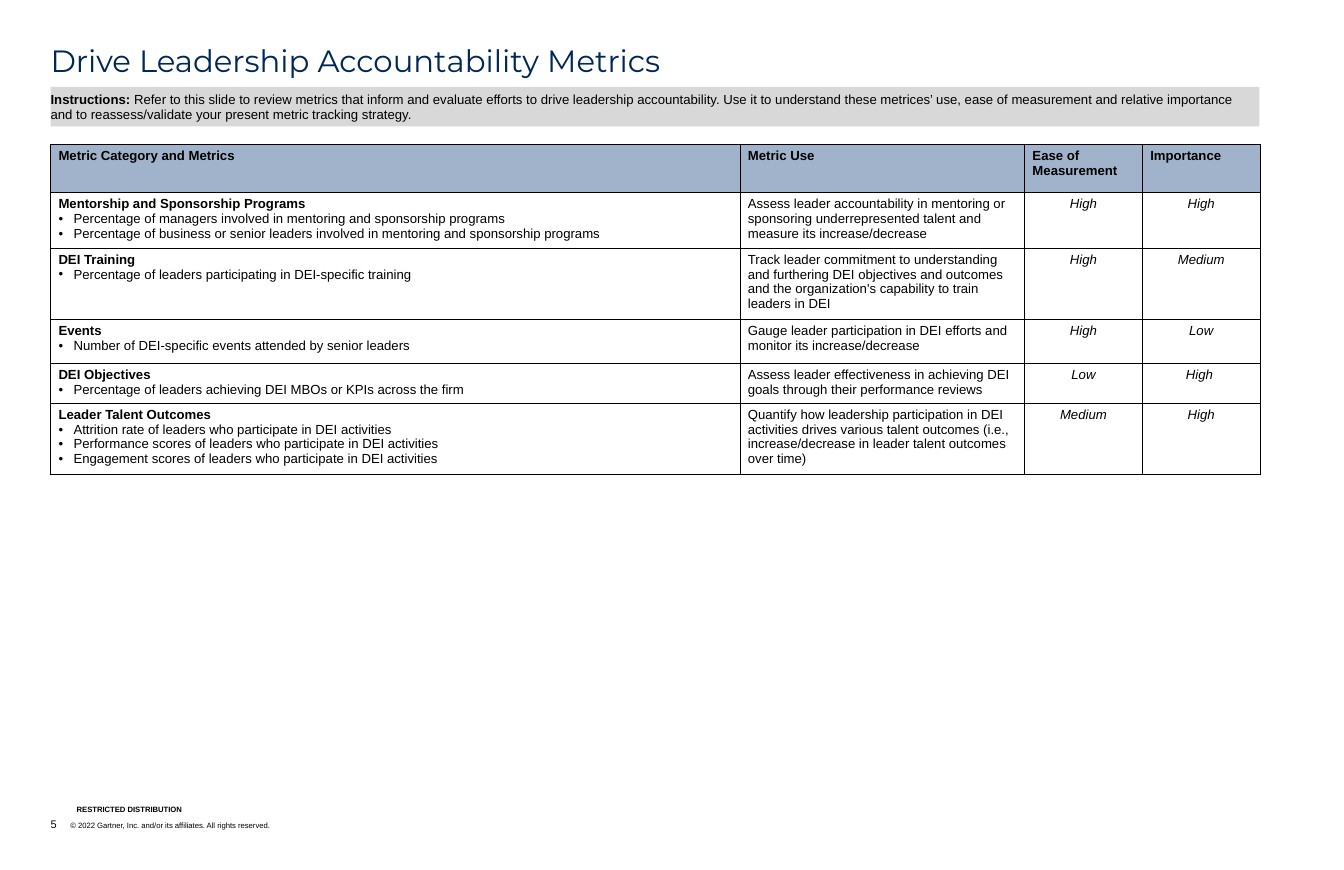
import pptx
import pptx.dml.color
import pptx.enum.shapes
import pptx.enum.text
import pptx.oxml
import pptx.oxml.ns
import pptx.util

Inches = pptx.util.Inches
Pt = pptx.util.Pt
RGBColor = pptx.dml.color.RGBColor
ALIGN = pptx.enum.text.PP_ALIGN
ANCHOR = pptx.enum.text.MSO_ANCHOR

NAVY = RGBColor(0x00, 0x28, 0x56)
BLACK = RGBColor(0x00, 0x00, 0x00)
GREY = RGBColor(0xD8, 0xD8, 0xD8)
STEEL = RGBColor(0xA1, 0xB3, 0xCA)

LEFT = Inches(0.64)
CONTENT_WIDTH = Inches(15.29)
BULLET_INDENT = Inches(0.19)
COLUMN_WIDTHS = [8.72, 3.6, 1.49, 1.49]
ROW_HEIGHTS = [0.61, 0.57, 0.41, 0.56, 0.41, 0.41]

HEADERS = ["Metric Category and Metrics", "Metric Use", "Ease of Measurement", "Importance"]
METRICS = [
    ("Mentorship and Sponsorship Programs",
     ["Percentage of managers involved in mentoring and sponsorship programs",
      "Percentage of business or senior leaders involved in mentoring and sponsorship programs"],
     "Assess leader accountability in mentoring or sponsoring underrepresented talent "
     "and measure its increase/decrease", "High", "High"),
    ("DEI Training",
     ["Percentage of leaders participating in DEI-specific training"],
     "Track leader commitment to understanding and furthering DEI objectives and outcomes "
     "and the organization's capability to train leaders in DEI", "High", "Medium"),
    ("Events",
     ["Number of DEI-specific events attended by senior leaders"],
     "Gauge leader participation in DEI efforts and monitor its increase/decrease",
     "High", "Low"),
    ("DEI Objectives",
     ["Percentage of leaders achieving DEI MBOs or KPIs across the firm"],
     "Assess leader effectiveness in achieving DEI goals through their performance reviews",
     "Low", "High "),
    ("Leader Talent Outcomes",
     ["Attrition rate of leaders who participate in DEI activities",
      "Performance scores of leaders who participate in DEI activities",
      "Engagement scores of leaders who participate in DEI activities"],
     "Quantify how leadership participation in DEI activities drives various talent outcomes "
     "(i.e., increase/decrease in leader talent outcomes over time)", "Medium", "High"),
]


def format_run(run, size=12, bold=False, italic=False, color=BLACK, name="Arial"):
    run.font.name = name
    run.font.size = Pt(size)
    run.font.bold = bold
    run.font.italic = italic
    run.font.color.rgb = color


def set_margins(frame, vertical=0):
    frame.margin_left = frame.margin_right = 0
    frame.margin_top = frame.margin_bottom = Inches(vertical)
    frame.word_wrap = True


def set_indent(paragraph, indent):
    properties = paragraph._p.get_or_add_pPr()
    properties.set("marL", str(indent))
    properties.set("indent", str(-indent))
    return properties


def add_bullet(paragraph):
    properties = set_indent(paragraph, BULLET_INDENT)
    for element in ('buFont {} typeface="Arial"', 'buChar {} char="•"'):
        markup = element.format(pptx.oxml.ns.nsdecls("a"))
        properties.append(pptx.oxml.parse_xml(f"<a:{markup}/>"))


def add_title(slide):
    title = slide.shapes.title
    title.left, title.top = LEFT, Inches(0.58)
    title.width, title.height = Inches(15.72), Inches(0.72)
    frame = title.text_frame
    frame.text = "Drive Leadership Accountability Metrics"
    set_margins(frame)
    frame.auto_size = pptx.enum.text.MSO_AUTO_SIZE.NONE
    frame.vertical_anchor = ANCHOR.TOP
    heading = frame.paragraphs[0]
    heading.alignment = ALIGN.LEFT
    heading.line_spacing = 0.9
    format_run(heading.runs[0], 28, color=NAVY, name="Montserrat")


def add_instructions(slide):
    banner = slide.shapes.add_shape(
        pptx.enum.shapes.MSO_SHAPE.RECTANGLE, LEFT, Inches(1.1), CONTENT_WIDTH, Inches(0.5))
    banner.shadow.inherit = False
    banner.fill.solid()
    banner.fill.fore_color.rgb = GREY
    banner.line.fill.background()
    frame = banner.text_frame
    set_margins(frame, 0.05)
    frame.vertical_anchor = ANCHOR.TOP
    instructions = frame.paragraphs[0]
    instructions.text = "Instructions: "
    instructions.alignment = ALIGN.LEFT
    format_run(instructions.runs[0], bold=True)
    guidance = instructions.add_run()
    guidance.text = (
        "Refer to this slide to review metrics that inform and evaluate efforts to drive "
        "leadership accountability. Use it to understand these metrices’ use, ease of "
        "measurement and relative importance and to reassess/validate your present metric "
        "tracking strategy.")
    format_run(guidance)


def add_borders(cell):
    properties = cell._tc.get_or_add_tcPr()
    for side in ("lnL", "lnR", "lnT", "lnB"):
        properties.append(pptx.oxml.parse_xml(
            f'<a:{side} {pptx.oxml.ns.nsdecls("a")} w="{Pt(1)}"><a:solidFill>'
            f'<a:srgbClr val="{BLACK}"/></a:solidFill></a:{side}>'))


def fill_cell(cell, text, fill=None, alignment=ALIGN.LEFT, bullets=(), **style):
    add_borders(cell)
    if fill is None:
        cell.fill.background()
    else:
        cell.fill.solid()
        cell.fill.fore_color.rgb = fill
    lead = cell.text_frame.paragraphs[0]
    lead.text = text
    lead.alignment = alignment
    format_run(lead.runs[0], **style)
    for bullet in bullets:
        item = cell.text_frame.add_paragraph()
        item.text = bullet
        add_bullet(item)
        format_run(item.runs[0])


def add_metrics_table(slide):
    table = slide.shapes.add_table(
        len(ROW_HEIGHTS), len(COLUMN_WIDTHS), LEFT, Inches(1.83),
        CONTENT_WIDTH, Inches(sum(ROW_HEIGHTS))).table
    table.horz_banding = False
    for column, width in zip(table.columns, COLUMN_WIDTHS):
        column.width = Inches(width)
    for row, height in zip(table.rows, ROW_HEIGHTS):
        row.height = Inches(height)
    for column, header in enumerate(HEADERS):
        fill_cell(table.cell(0, column), header, STEEL, bold=True)
    for row, (category, metrics, use, ease, importance) in enumerate(METRICS, 1):
        fill_cell(table.cell(row, 0), category, bullets=metrics, bold=True)
        fill_cell(table.cell(row, 1), use)
        for column, rating in enumerate((ease, importance), 2):
            fill_cell(table.cell(row, column), rating, alignment=ALIGN.CENTER, italic=True)


def add_footer_line(slide, text, left, top, width, height, **style):
    box = slide.shapes.add_textbox(left, Inches(top), Inches(width), Inches(height))
    frame = box.text_frame
    frame.text = text
    set_margins(frame)
    frame.vertical_anchor = ANCHOR.BOTTOM
    line = frame.paragraphs[0]
    format_run(line.runs[0], **style)
    return line


def add_footer(slide):
    notice = add_footer_line(slide, "RESTRICTED DISTRIBUTION", Inches(0.97),
                             10.18, 3.23, 0.11, size=7, bold=True)
    notice.line_spacing = 0.9
    page_line = add_footer_line(slide, "5", LEFT, 10.33, 10.19, 0.17, size=10)
    set_indent(page_line, Inches(0.25))
    rights = page_line.add_run()
    rights.text = "\t© 2022 Gartner, Inc. and/or its affiliates. All rights reserved."
    format_run(rights, 7)


def main():
    presentation = pptx.Presentation()
    presentation.slide_width = Inches(17)
    presentation.slide_height = Inches(11)
    slide = presentation.slides.add_slide(presentation.slide_layouts[5])
    add_footer(slide)
    add_title(slide)
    add_metrics_table(slide)
    add_instructions(slide)
    presentation.save("out.pptx")


if __name__ == "__main__":
    main()
